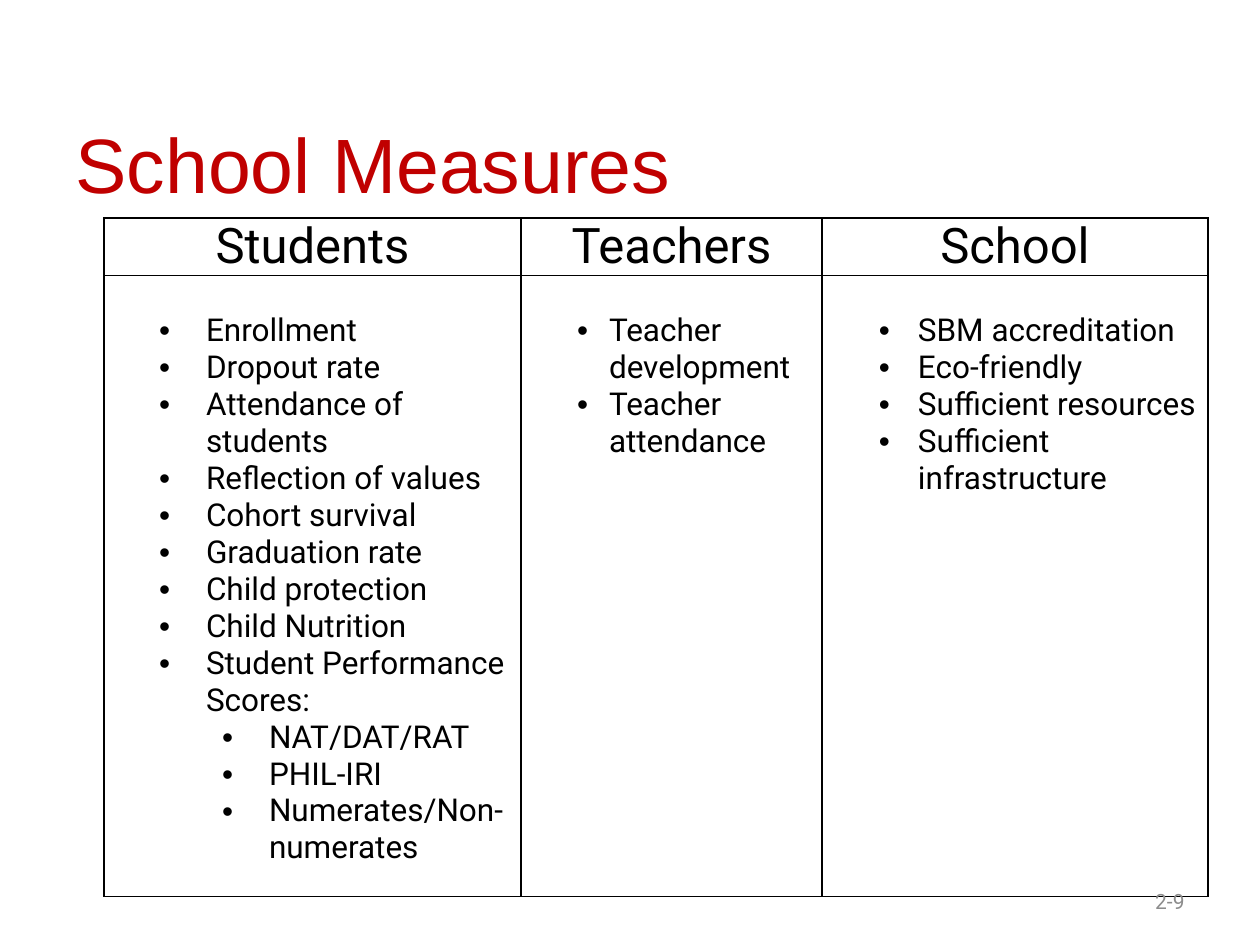
from dataclasses import dataclass

from lxml import etree
from pptx import Presentation
from pptx.dml.color import RGBColor
from pptx.enum.text import MSO_ANCHOR, PP_ALIGN
from pptx.oxml.ns import qn
from pptx.util import Emu, Pt

LEFT, CENTER, RIGHT = PP_ALIGN.LEFT, PP_ALIGN.CENTER, PP_ALIGN.RIGHT
MIDDLE = MSO_ANCHOR.MIDDLE
PX_PER_INCH = 126
TITLE_ONLY = 5


@dataclass(frozen=True)
class Theme:
    title_font: str = "Arial"
    body_font: str = "Roboto"
    title_color: str = "C00000"
    text_color: str = "000000"
    number_color: str = "8C8C8C"
    title_size: int = 44
    heading_size: int = 28
    body_size: int = 18
    number_size: int = 12
    border_width: int = 1


@dataclass(frozen=True)
class Column:
    heading: str
    width: int
    indent: int
    hanging: int
    items: tuple


THEME = Theme()
SUB_INDENT = 63
ROW_HEIGHTS = (57, 621)
CELL_SIDE = 9
LIST_TOP = 37

COLUMNS = (
    Column("Students", 417, 93, 47, (
        ("Enrollment", 0),
        ("Dropout rate", 0),
        ("Attendance of students", 0),
        ("Reflection of values", 0),
        ("Cohort survival", 0),
        ("Graduation rate", 0),
        ("Child protection", 0),
        ("Child Nutrition", 0),
        ("Student Performance Scores:", 0),
        ("NAT/DAT/RAT", 1),
        ("PHIL-IRI", 1),
        ("Numerates/Non-numerates", 1),
    )),
    Column("Teachers", 301, 79, 32, (
        ("Teacher development", 0),
        ("Teacher attendance", 0),
    )),
    Column("School", 386, 87, 39, (
        ("SBM accreditation", 0),
        ("Eco-friendly", 0),
        ("Sufficient resources", 0),
        ("Sufficient infrastructure", 0),
    )),
)


def px(length):
    return Emu(round(length * 914400 / PX_PER_INCH))


def place(shape, left, top, width, height):
    shape.left, shape.top = px(left), px(top)
    shape.width, shape.height = px(width), px(height)


def format_paragraph(para, font, size, color, align=LEFT):
    para.alignment = align
    for span in para.runs:
        span.font.name = font
        span.font.size = Pt(size)
        span.font.color.rgb = RGBColor.from_string(color)


def add_title(page, text):
    title = page.shapes.title
    place(title, 63, 84, 955, 158)
    frame = title.text_frame
    frame.text = text
    frame.vertical_anchor = MIDDLE
    format_paragraph(frame.paragraphs[0], THEME.title_font, THEME.title_size, THEME.title_color)


def add_page_number(page, text):
    box = page.shapes.add_textbox(px(903), px(876), px(294), px(50))
    frame = box.text_frame
    frame.word_wrap = True
    frame.vertical_anchor = MIDDLE
    frame.text = text
    format_paragraph(frame.paragraphs[0], THEME.body_font, THEME.number_size,
                     THEME.number_color, RIGHT)


def style_cell(cell, top_margin):
    cell.margin_left = cell.margin_right = px(CELL_SIDE)
    cell.margin_top, cell.margin_bottom = px(top_margin), 0
    properties = cell._tc.get_or_add_tcPr()
    for side in ("a:lnL", "a:lnR", "a:lnT", "a:lnB"):
        line = etree.SubElement(properties, qn(side), w=str(Pt(THEME.border_width)))
        fill = etree.SubElement(line, qn("a:solidFill"))
        etree.SubElement(fill, qn("a:srgbClr"), val=THEME.text_color)
    cell.fill.background()


def add_bullet(para, indent, hanging):
    properties = para._p.get_or_add_pPr()
    properties.set("marL", str(px(indent)))
    properties.set("indent", str(-px(hanging)))
    etree.SubElement(properties, qn("a:buFont"), typeface="Arial")
    etree.SubElement(properties, qn("a:buChar"), char="•")


def fill_heading(cell, text):
    style_cell(cell, 0)
    cell.text_frame.text = text
    format_paragraph(cell.text_frame.paragraphs[0], THEME.body_font, THEME.heading_size,
                     THEME.text_color, CENTER)


def fill_list(cell, column):
    style_cell(cell, LIST_TOP)
    frame = cell.text_frame
    frame.text = "\n".join(text for text, level in column.items)
    for para, (text, level) in zip(frame.paragraphs, column.items):
        para.level = level
        add_bullet(para, column.indent + level * SUB_INDENT, column.hanging)
        format_paragraph(para, THEME.body_font, THEME.body_size, THEME.text_color)


def add_measures_table(page):
    width = sum(column.width for column in COLUMNS)
    table = page.shapes.add_table(len(ROW_HEIGHTS), len(COLUMNS), px(104), px(218),
                                  px(width), px(sum(ROW_HEIGHTS))).table
    table.first_row = table.horz_banding = False
    for row, height in zip(table.rows, ROW_HEIGHTS):
        row.height = px(height)
    for index, column in enumerate(COLUMNS):
        table.columns[index].width = px(column.width)
        fill_heading(table.cell(0, index), column.heading)
        fill_list(table.cell(1, index), column)


def main():
    deck = Presentation()
    deck.slide_width, deck.slide_height = px(1260), px(945)
    page = deck.slides.add_slide(deck.slide_layouts[TITLE_ONLY])
    add_title(page, "School Measures")
    add_measures_table(page)
    add_page_number(page, "2-9")
    deck.save("out.pptx")


if __name__ == "__main__":
    main()
